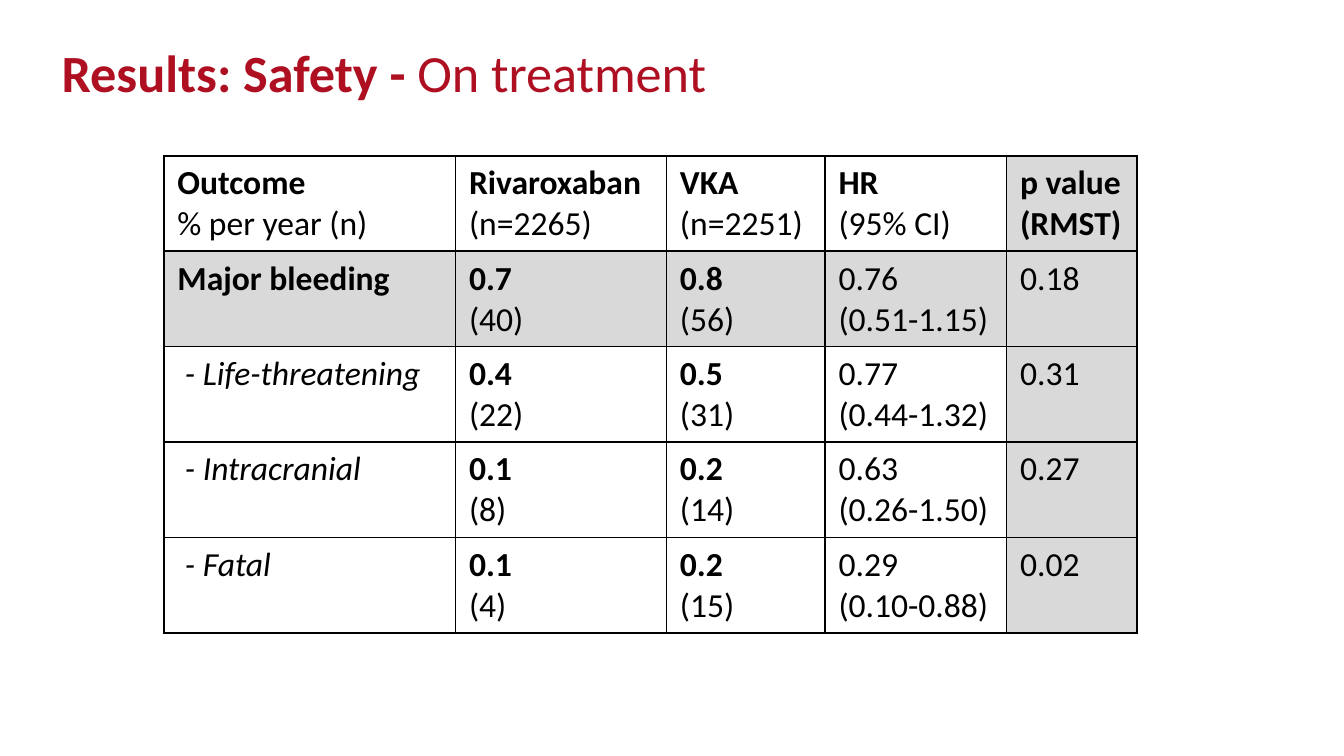
from lxml import etree
from pptx import Presentation
from pptx.dml.color import RGBColor
from pptx.enum.text import MSO_ANCHOR
from pptx.oxml.ns import qn
from pptx.util import Inches, Pt

TOP = MSO_ANCHOR.TOP
FONT = "Calibri"
COLORS = {"title": "AE1022", "text": "000000", "shade": "D9D9D9", "border": "000000"}
BOLD, ITALIC, PLAIN = "bold", "italic", "plain"

COLUMN_WIDTHS = [2.17, 1.57, 1.18, 1.35, 0.97]
ROW_HEIGHT = 0.71
HEADER = [
    [[("Outcome", BOLD)], [("% per year (n)", PLAIN)]],
    [[("Rivaroxaban", BOLD), (" (n=2265)", PLAIN)]],
    [[("VKA ", BOLD), ("(n=2251)", PLAIN)]],
    [[("HR", BOLD)], [("(95% CI)", PLAIN)]],
    [[("p value (RMST)", BOLD)]],
]
OUTCOMES = [
    ("Major bleeding", BOLD, "0.7", "(40)", "0.8", "(56)", "0.76", "(0.51-1.15)", "0.18"),
    (" - Life-threatening", ITALIC, "0.4", "(22)", "0.5", "(31)", "0.77", "(0.44-1.32)", "0.31"),
    (" - Intracranial", ITALIC, "0.1", "(8)", "0.2", "(14)", "0.63", "(0.26-1.50)", "0.27"),
    (" - Fatal", ITALIC, "0.1", "(4)", "0.2", "(15)", "0.29", "(0.10-0.88)", "0.02"),
]


def write_text(frame, paragraphs, size=18, color="text", line_spacing=None):
    for index, runs in enumerate(paragraphs):
        paragraph = frame.add_paragraph() if index else frame.paragraphs[0]
        if line_spacing:
            paragraph.line_spacing = Pt(line_spacing)
        for text, style in runs:
            run = paragraph.add_run()
            run.text = text
            run.font.name = FONT
            run.font.size = Pt(size)
            run.font.bold = style == BOLD
            run.font.italic = style == ITALIC
            run.font.color.rgb = RGBColor.from_string(COLORS[color])


def outcome_row(outcome):
    label, style, riva_rate, riva_n, vka_rate, vka_n, ratio, interval, p_value = outcome
    return [
        [[(label, style)]],
        [[(riva_rate, BOLD)], [(riva_n, PLAIN)]],
        [[(vka_rate, BOLD)], [(vka_n, PLAIN)]],
        [[(ratio, PLAIN)], [(interval, PLAIN)]],
        [[(p_value, PLAIN)]],
    ]


def add_borders(cell, width=1):
    properties = cell._tc.get_or_add_tcPr()
    for position, side in enumerate(("a:lnL", "a:lnR", "a:lnT", "a:lnB")):
        line = etree.Element(qn(side), w=str(Pt(width)))
        fill = etree.SubElement(line, qn("a:solidFill"))
        etree.SubElement(fill, qn("a:srgbClr"), val=COLORS["border"])
        properties.insert(position, line)


def add_title(slide):
    title = slide.shapes.add_textbox(Inches(0.36), Inches(0.37), Inches(8.35), Inches(0.47))
    title.text_frame.word_wrap = True
    title.text_frame.vertical_anchor = TOP
    runs = [("Results: Safety - ", BOLD), ("On treatment", PLAIN)]
    write_text(title.text_frame, [runs], size=28, color="title", line_spacing=25)


def add_safety_table(slide):
    rows = [HEADER] + [outcome_row(outcome) for outcome in OUTCOMES]
    table = slide.shapes.add_table(
        len(rows), len(COLUMN_WIDTHS), Inches(1.22), Inches(1.16),
        Inches(sum(COLUMN_WIDTHS)), Inches(ROW_HEIGHT * len(rows)),
    ).table
    table.first_row = False
    table.horz_banding = False
    for column, width in zip(table.columns, COLUMN_WIDTHS):
        column.width = Inches(width)
    p_column = len(COLUMN_WIDTHS) - 1
    for r, contents in enumerate(rows):
        table.rows[r].height = Inches(ROW_HEIGHT)
        for c, paragraphs in enumerate(contents):
            cell = table.cell(r, c)
            write_text(cell.text_frame, paragraphs)
            if r == 1 or c == p_column:
                cell.fill.solid()
                cell.fill.fore_color.rgb = RGBColor.from_string(COLORS["shade"])
            else:
                cell.fill.background()
            add_borders(cell)


def main():
    presentation = Presentation()
    presentation.slide_width = Inches(10)
    presentation.slide_height = presentation.slide_width * 9 // 16
    slide = presentation.slides.add_slide(presentation.slide_layouts[6])
    add_title(slide)
    add_safety_table(slide)
    presentation.save("out.pptx")


if __name__ == "__main__":
    main()
